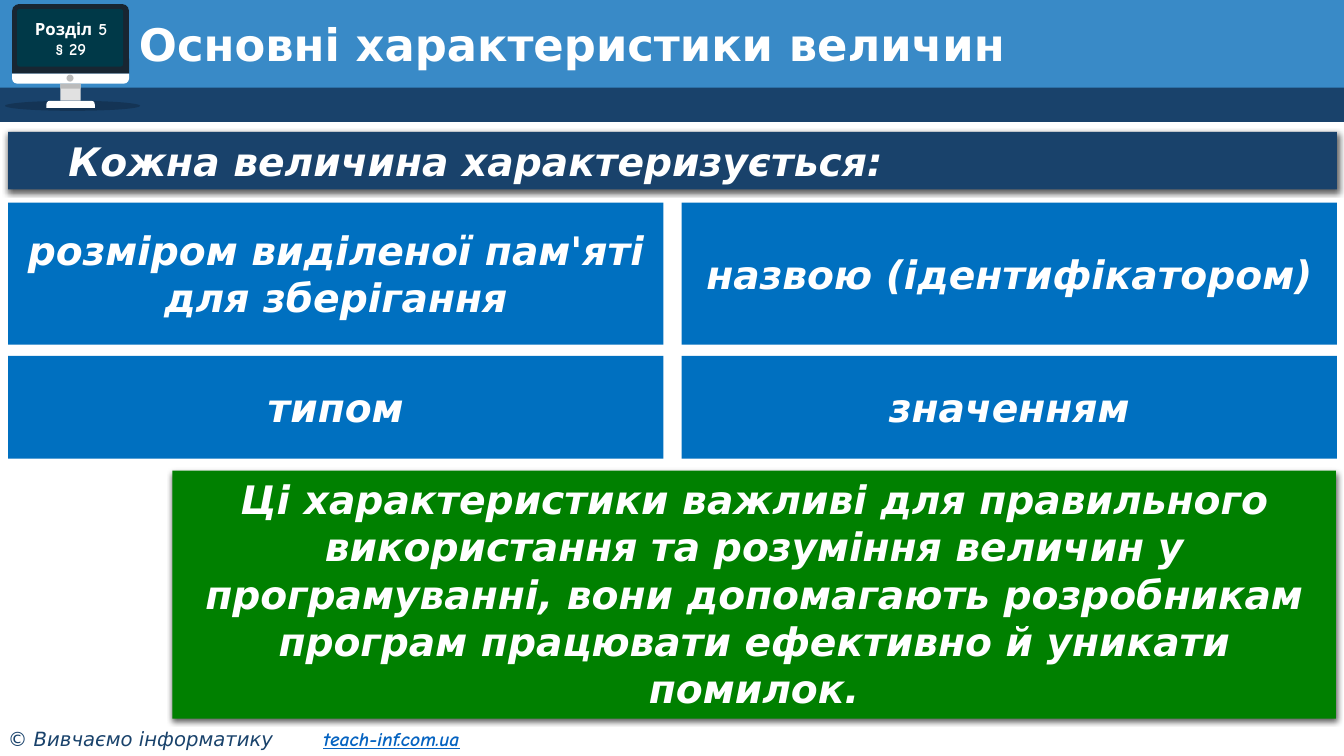
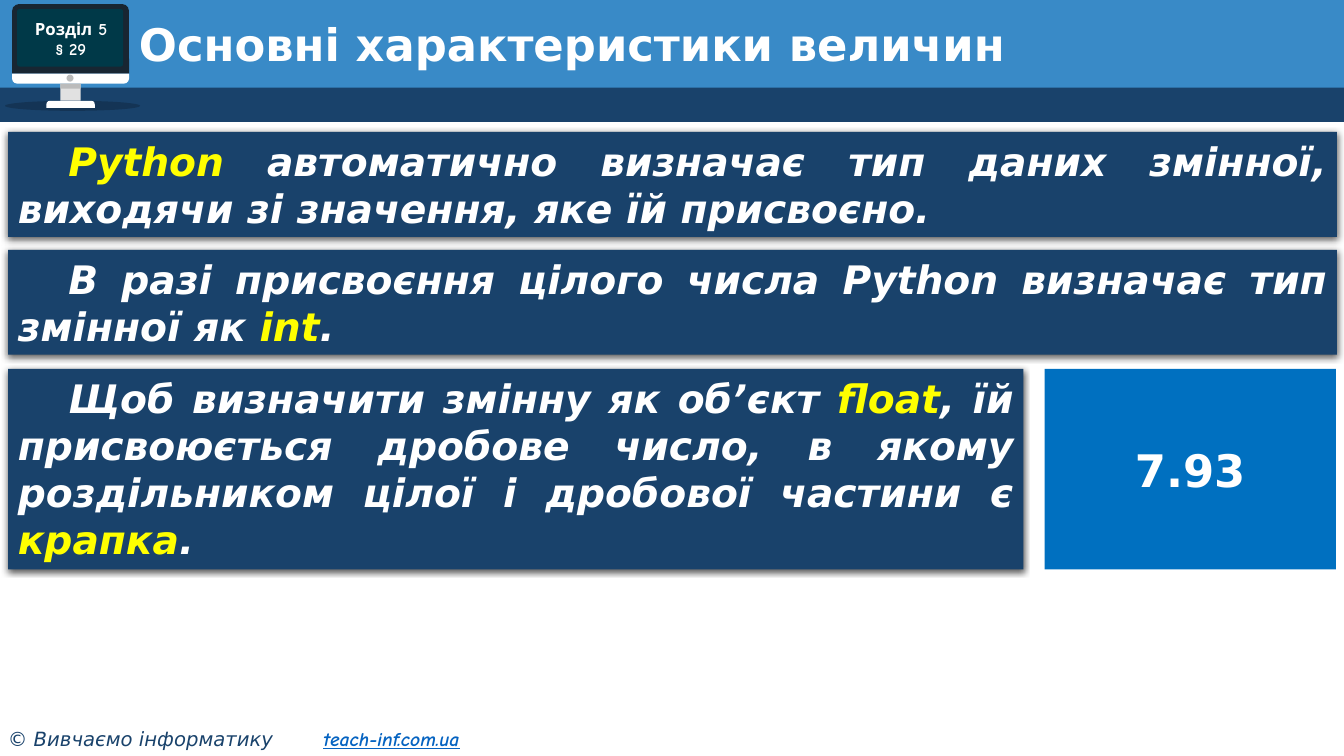
"""Build two slides on the main characteristics of values in programming."""
from lxml import etree
from pptx import Presentation
from pptx.dml.color import RGBColor
from pptx.enum.shapes import MSO_SHAPE
from pptx.enum.text import MSO_ANCHOR, PP_ALIGN
from pptx.oxml.ns import qn
from pptx.util import Inches, Pt

BLUE = RGBColor(0x39, 0x8A, 0xC7)
NAVY = RGBColor(0x19, 0x42, 0x6B)
TILE = RGBColor(0x00, 0x70, 0xC0)
GREEN = RGBColor(0x00, 0x80, 0x00)
YELLOW = RGBColor(0xFF, 0xFF, 0x00)
WHITE = RGBColor(0xFF, 0xFF, 0xFF)
BLACK = RGBColor(0x00, 0x00, 0x00)
LINK = RGBColor(0x05, 0x63, 0xC1)
BEZEL = RGBColor(0x18, 0x26, 0x32)
SCREEN = RGBColor(0x00, 0x39, 0x48)
LIGHT_GREY = RGBColor(0xE1, 0xE1, 0xE1)
GREY = RGBColor(0xBB, 0xBB, 0xBB)

FONT = "DejaVu Sans"
FONT_2 = "Comic Neue"
TITLE = "Основні характеристики величин"

RECT, OVAL = MSO_SHAPE.RECTANGLE, MSO_SHAPE.OVAL
TOP_ROUND = MSO_SHAPE.ROUND_2_SAME_RECTANGLE

BANDS_AND_MONITOR = [
    (RECT, (0, 0, 13.33, 0.91), BLUE, ()),
    (RECT, (0, 0.87, 13.33, 0.34), NAVY, ()),
    (OVAL, (0.05, 1, 1.34, 0.1), BLACK, ()),
    (TOP_ROUND, (0.12, 0.04, 1.16, 0.69), BEZEL, (0.1, 0)),
    (TOP_ROUND, (0.12, 0.73, 1.16, 0.1), WHITE, (0, 0.5)),
    (RECT, (0.6, 0.83, 0.2, 0.17), LIGHT_GREY, ()),
    (RECT, (0.6, 0.83, 0.2, 0.05), GREY, ()),
    (TOP_ROUND, (0.46, 1, 0.48, 0.07), WHITE, (0.5, 0)),
    (OVAL, (0.66, 0.74, 0.07, 0.07), GREY, ()),
    (MSO_SHAPE.ROUNDED_RECTANGLE, (0.17, 0.09, 1.05, 0.57), SCREEN, (0.04,)),
]

TILES = ["розміром виділеної пам'яті для зберігання", "назвою (ідентифікатором)",
         "типом", "значенням"]
TILE_ROWS = [(2.01, 1.41), (3.53, 1.02)]

SLIDES = [
    [((0.08, 1.31, 13.18, 0.57), NAVY, "Кожна величина характеризується:")]
    + [((0.08 + i % 2 * 6.68, TILE_ROWS[i // 2][0], 6.5, TILE_ROWS[i // 2][1]), TILE, text)
       for i, text in enumerate(TILES)]
    + [((1.71, 4.67, 11.54, 2.46), GREEN,
        "Ці характеристики важливі для правильного використання та розуміння величин "
        "у програмуванні, вони допомагають розробникам програм працювати ефективно "
        "й уникати помилок.")],
    [((0.08, 1.31, 13.18, 1.04), NAVY,
      "*Python* автоматично визначає тип даних змінної, виходячи зі значення, "
      "яке їй присвоєно."),
     ((0.08, 2.48, 13.18, 1.04), NAVY,
      "В разі присвоєння цілого числа Python визначає тип змінної як *int*."),
     ((0.08, 3.66, 10.07, 1.99), NAVY,
      "Щоб визначити змінну як об’єкт *float*, їй присвоюється дробове число, "
      "в якому роздільником цілої і дробової частини є *крапка*."),
     ((10.36, 3.66, 2.89, 1.99), TILE, "7.93")],
]


def add_box(slide, kind, at, fill, adjustments=()):
    """Add a filled shape without an outline or shadow."""
    sp = slide.shapes.add_shape(kind, *map(Inches, at))
    sp.shadow.inherit = False
    sp.fill.solid()
    sp.fill.fore_color.rgb = fill
    sp.line.fill.background()
    for i, value in enumerate(adjustments):
        sp.adjustments[i] = value
    return sp


def style(p, size, color=WHITE, name=FONT, bold=True, italic=False):
    """Set the font of a whole paragraph."""
    p.font.size = Pt(size)
    p.font.name = name
    p.font.color.rgb = color
    p.font.bold = bold
    p.font.italic = italic


prs = Presentation()
prs.slide_width = Inches(13.33)
prs.slide_height = Inches(7.5)

for panels in SLIDES:
    s = prs.slides.add_slide(prs.slide_layouts[6])

    for kind, at, fill, adjustments in BANDS_AND_MONITOR:
        sp = add_box(s, kind, at, fill, adjustments)
        if fill == BLACK:
            color = sp._element.spPr.find(".//" + qn("a:srgbClr"))
            etree.SubElement(color, qn("a:alpha"), val="20000")

    tf = s.shapes.add_textbox(Inches(-0.02), Inches(7.16), Inches(5.23), Inches(0.34)).text_frame
    tf.word_wrap = True
    p = tf.paragraphs[0]
    tabs = etree.SubElement(p._p.get_or_add_pPr(), qn("a:tabLst"))
    etree.SubElement(tabs, qn("a:tab"), pos=str(Inches(3.13)), algn="l")
    style(p, 14, NAVY, bold=False, italic=True)
    p.add_run().text = "© Вивчаємо інформатику\t"
    r = p.add_run()
    r.text = "teach-inf.com.ua"
    r.font.name = FONT_2
    r.font.color.rgb = LINK
    r.font.bold = True
    r.font.underline = True

    tf = s.shapes.add_textbox(Inches(0.13), Inches(0.09), Inches(1.15), Inches(0.59)).text_frame
    tf.word_wrap = True
    tf.vertical_anchor = MSO_ANCHOR.MIDDLE
    tf.text = "Розділ 5\n§ 29"
    for p in tf.paragraphs:
        p.alignment = PP_ALIGN.CENTER
        style(p, 12, name=FONT_2)

    tf = s.shapes.add_textbox(Inches(1.28), Inches(0.18), Inches(11.72), Inches(0.58)).text_frame
    tf.word_wrap = True
    tf.vertical_anchor = MSO_ANCHOR.MIDDLE
    p = tf.paragraphs[0]
    p.text = TITLE
    p.line_spacing = 0.9
    style(p, 32)

    for at, fill, text in panels:
        sp = add_box(s, RECT, at, fill)
        tf = sp.text_frame
        tf.word_wrap = True
        tf.vertical_anchor = MSO_ANCHOR.MIDDLE if fill == TILE else MSO_ANCHOR.TOP
        p = tf.paragraphs[0]
        p.alignment = PP_ALIGN.JUSTIFY if fill == NAVY else PP_ALIGN.CENTER
        if fill == NAVY:
            p._p.get_or_add_pPr().set("indent", str(Inches(0.5)))
        if text == "7.93":
            style(p, 32)
        else:
            style(p, 28, italic=True)
        for i, part in enumerate(text.split("*")):
            if part:
                r = p.add_run()
                r.text = part
                if i % 2:
                    r.font.color.rgb = YELLOW
        if fill != TILE:
            effects = sp._element.spPr.find(qn("a:effectLst"))
            shadow = etree.SubElement(effects, qn("a:outerShdw"), blurRad=str(Pt(4.5)),
                                      dist=str(Pt(1.5)), dir="5400000", algn="ctr",
                                      rotWithShape="0")
            color = etree.SubElement(shadow, qn("a:srgbClr"), val=str(BLACK))
            etree.SubElement(color, qn("a:alpha"), val="63000")

prs.save("out.pptx")
